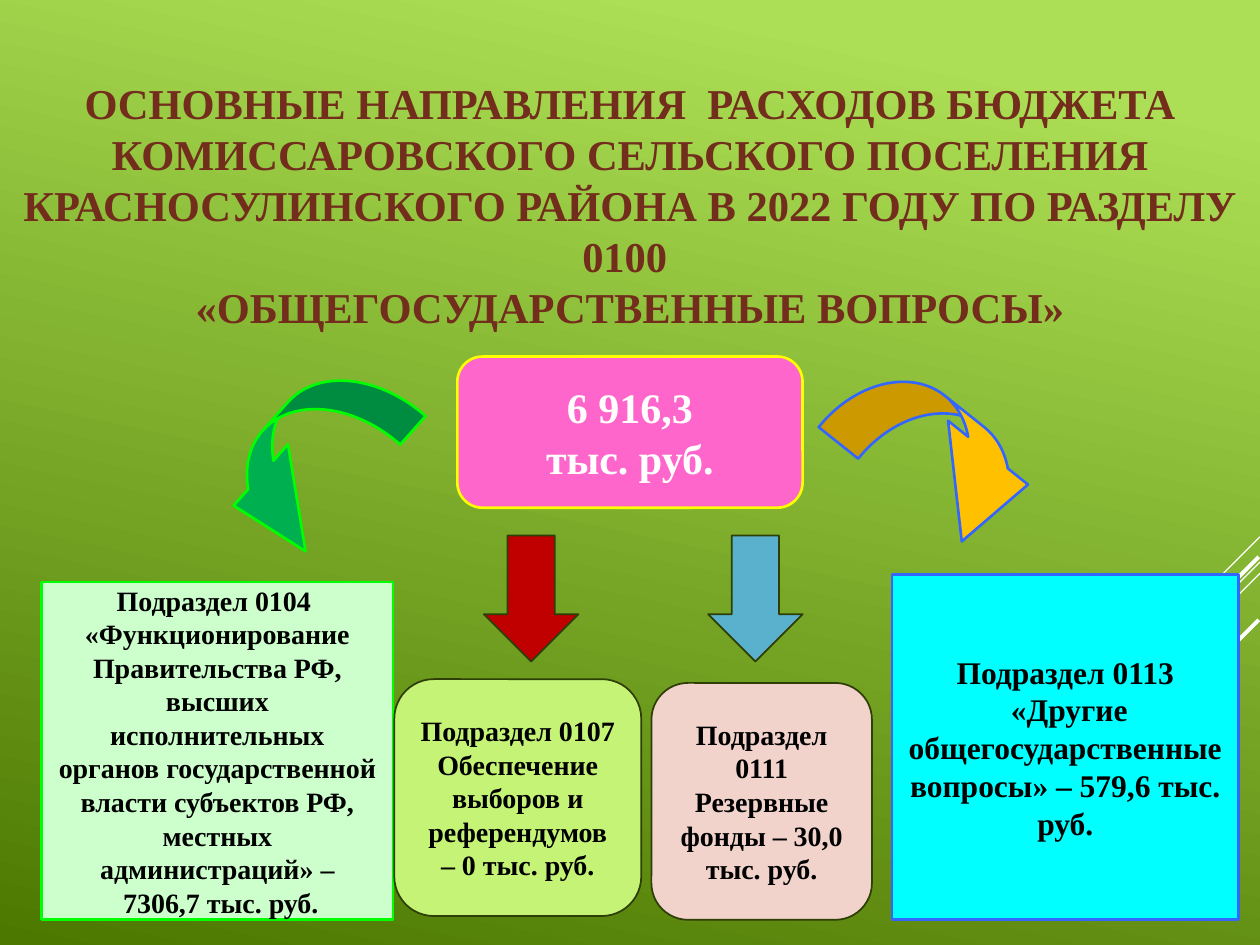
"""Build the slide on spending under budget section 0100."""
from lxml.etree import SubElement
from pptx import Presentation
from pptx.dml.color import RGBColor
from pptx.enum.shapes import MSO_CONNECTOR, MSO_SHAPE
from pptx.enum.text import MSO_ANCHOR, MSO_AUTO_SIZE, PP_ALIGN
from pptx.oxml.ns import qn
from pptx.util import Inches, Pt

THEME = {
    "font": "Times New Roman",
    "background": [(0.1, "ACDF55"), (1, "4C7800")],
    "background_angle": 258,
    "title": "722D1D", "title_size": 24.3,
    "light": "FFFFFF", "dark": "000000", "outline": "2E3E07",
    "total_size": 24, "large_size": 18, "body_size": 16,
}
TITLE = (
    "ОСНОВНЫЕ НАПРАВЛЕНИЯ  РАСХОДОВ БЮДЖЕТА КОМИССАРОВСКОГО СЕЛЬСКОГО "
    "ПОСЕЛЕНИЯ КРАСНОСУЛИНСКОГО РАЙОНА В 2022 ГОДУ ПО РАЗДЕЛУ 0100 \v"
    "«ОБЩЕГОСУДАРСТВЕННЫЕ ВОПРОСЫ»"
)
TITLE_PLACE = (0, 0.6, 10, 2.05)
CORNER_LINES = [
    ((10, 4.26), (9.17, 5.09), 0.75),
    ((10, 4.46), (7.3, 7.17), 0.75),
    ((10, 4.55), (8.28, 6.27), 0.75),
    ((9.99, 4.42), (8.42, 5.99), 2.25),
    ((9.99, 4.92), (8.85, 6.06), 2.25),
]
BOXES = [
    {"kind": MSO_SHAPE.ROUNDED_RECTANGLE, "place": (3.63, 2.83, 2.74, 1.2),
     "fill": "FF66CC", "line": ("FFFF00", 1.5), "margins": (0.14, 0.05),
     "size": "total_size", "color": "light",
     "lines": ["6 916,3", "тыс. руб."]},
    {"kind": MSO_SHAPE.RECTANGLE, "place": (0.33, 4.62, 2.79, 2.68),
     "fill": "CCFFCC", "line": ("00FF00", 1.5), "margins": (0.12, 0),
     "size": "body_size", "color": "dark",
     "lines": ["Подраздел 0104 ",
               "«Функционирование Правительства РФ, высших исполнительных "
               "органов государственной власти субъектов РФ, местных "
               "администраций» –",
               " 7306,7 тыс. руб."]},
    {"kind": MSO_SHAPE.RECTANGLE, "place": (7.08, 4.56, 2.75, 2.74),
     "fill": "00FFFF", "line": ("3366FF", 1.5), "margins": (0.12, 0),
     "size": "large_size", "color": "dark",
     "lines": ["Подраздел 0113",
               " «Другие общегосударственные вопросы» – 579,6 тыс. руб."]},
    {"kind": MSO_SHAPE.ROUNDED_RECTANGLE, "place": (3.13, 5.39, 1.96, 1.88),
     "fill": "C5F375", "line": (THEME["outline"], 1), "margins": (0.1, 0.05),
     "size": "body_size", "color": "dark",
     "lines": ["Подраздел 0107",
               "Обеспечение выборов и референдумов – 0 тыс. руб."]},
    {"kind": MSO_SHAPE.ROUNDED_RECTANGLE, "place": (5.17, 5.42, 1.75, 1.88),
     "fill": "F2D3CC", "line": (THEME["outline"], 1), "margins": (0.1, 0.05),
     "size": "body_size", "color": "dark",
     "lines": ["Подраздел 0111", "Резервные фонды – 30,0 тыс. руб."]},
]
ARROWS = [
    {"kind": MSO_SHAPE.CURVED_DOWN_ARROW, "place": (6.55, 3.24, 1.86, 0.82),
     "fill": "FFC000", "line": ("3366FF", 1.5),
     "rotation": 38.6, "adjustments": (0.49, 0.99, 0.83)},
    {"kind": MSO_SHAPE.CURVED_UP_ARROW, "place": (1.58, 3.22, 1.76, 0.89),
     "fill": "00B050", "line": ("00FF00", 1.5),
     "rotation": 131.6, "adjustments": (0.34, 0.73, 0.75)},
    {"kind": MSO_SHAPE.DOWN_ARROW, "place": (3.84, 4.25, 0.75, 1),
     "fill": "C00000", "line": (THEME["outline"], 1)},
    {"kind": MSO_SHAPE.DOWN_ARROW, "place": (5.62, 4.25, 0.75, 1),
     "fill": "59B1CD", "line": (THEME["outline"], 1)},
]


def color(value):
    return RGBColor.from_string(value)


def paint_background(slide):
    fill = slide.background.fill
    fill.gradient()
    fill.gradient_angle = THEME["background_angle"]
    for stop, (position, value) in zip(fill.gradient_stops, THEME["background"]):
        stop.position = position
        stop.color.rgb = color(value)


def write_text(shape, text, size, text_color, margins):
    frame = shape.text_frame
    frame.text = text
    frame.word_wrap = True
    frame.auto_size = MSO_AUTO_SIZE.NONE
    frame.vertical_anchor = MSO_ANCHOR.MIDDLE
    frame.margin_left = frame.margin_right = Inches(margins[0])
    frame.margin_top = frame.margin_bottom = Inches(margins[1])
    for paragraph in frame.paragraphs:
        paragraph.alignment = PP_ALIGN.CENTER
        for run in paragraph.runs:
            run.font.name = THEME["font"]
            run.font.size = Pt(size)
            run.font.bold = True
            run.font.color.rgb = color(text_color)


def add_title(slide):
    title = slide.shapes.title
    title.left, title.top, title.width, title.height = map(Inches, TITLE_PLACE)
    write_text(title, TITLE, THEME["title_size"], THEME["title"], (0.1, 0.05))


def add_corner_line(slide, start, end, width):
    line = slide.shapes.add_connector(
        MSO_CONNECTOR.STRAIGHT, *map(Inches, start + end))
    line.line.color.rgb = color(THEME["light"])
    line.line.width = Pt(width)
    SubElement(line.element.spPr, qn("a:effectLst"))


def add_figure(slide, figure):
    shape = slide.shapes.add_shape(figure["kind"], *map(Inches, figure["place"]))
    shape.shadow.inherit = False
    shape.fill.solid()
    shape.fill.fore_color.rgb = color(figure["fill"])
    line_color, line_width = figure["line"]
    shape.line.color.rgb = color(line_color)
    shape.line.width = Pt(line_width)
    shape.rotation = figure.get("rotation", 0)
    for index, value in enumerate(figure.get("adjustments", ())):
        shape.adjustments[index] = value
    return shape


def main():
    presentation = Presentation()
    presentation.slide_width, presentation.slide_height = Inches(10), Inches(7.5)
    slide = presentation.slides.add_slide(presentation.slide_layouts[5])
    paint_background(slide)
    add_title(slide)
    for corner_line in CORNER_LINES:
        add_corner_line(slide, *corner_line)
    for box in BOXES:
        shape = add_figure(slide, box)
        write_text(shape, "\n".join(box["lines"]), THEME[box["size"]],
                   THEME[box["color"]], box["margins"])
    for arrow in ARROWS:
        add_figure(slide, arrow)
    presentation.save("out.pptx")


if __name__ == "__main__":
    main()
